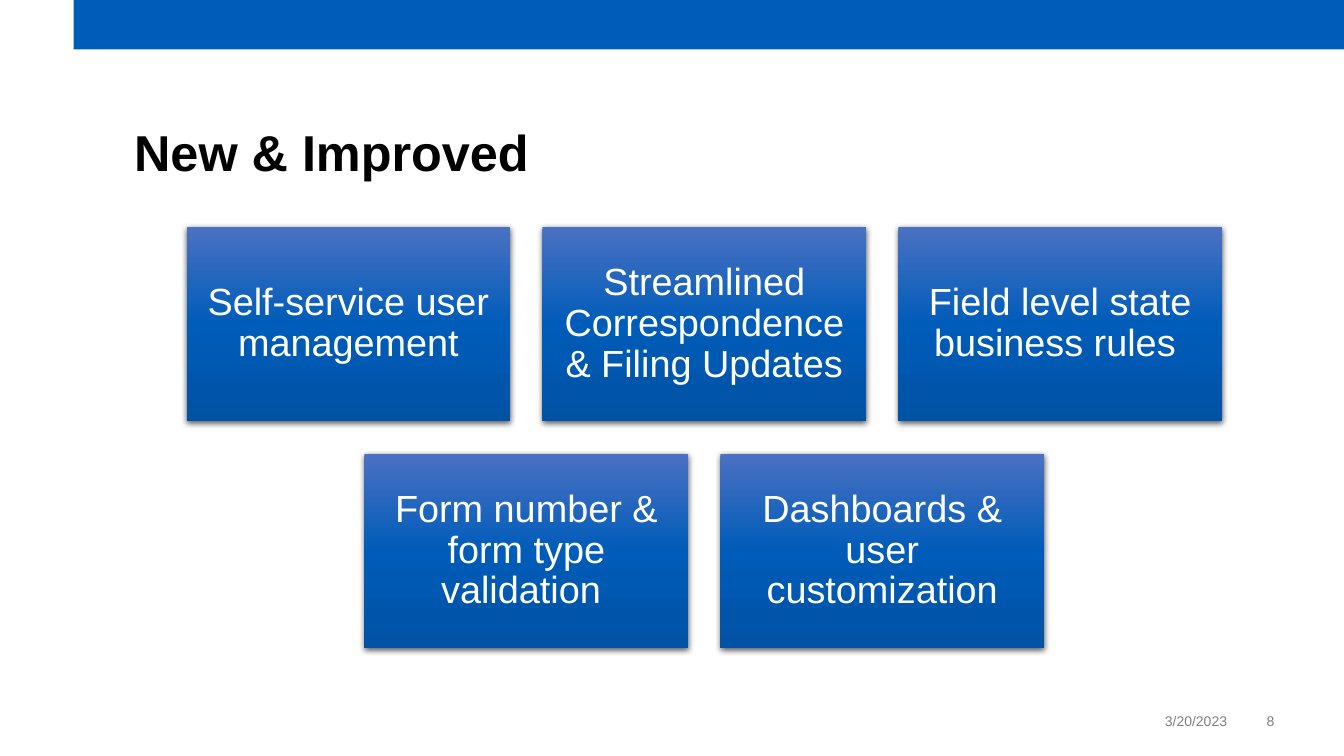
from lxml import etree
from pptx import Presentation
from pptx.dml.color import RGBColor
from pptx.enum.shapes import MSO_SHAPE
from pptx.enum.text import MSO_ANCHOR, MSO_AUTO_SIZE, PP_ALIGN
from pptx.oxml.ns import qn
from pptx.util import Inches, Pt

RECT = MSO_SHAPE.RECTANGLE
LEFT, CENTER, RIGHT = PP_ALIGN.LEFT, PP_ALIGN.CENTER, PP_ALIGN.RIGHT
MIDDLE, BOTTOM = MSO_ANCHOR.MIDDLE, MSO_ANCHOR.BOTTOM
NO_FIT = MSO_AUTO_SIZE.NONE

FONT = "Arial"
BLUE = "005CB9"
CARD_STOPS = [(0, "4B71C2"), (50, BLUE), (100, "0052A4")]
CARD_W, CARD_H = 3.21, 1.93
CARD_GAP = 0.32
CARD_ROWS = [
    ["Self-service user management",
     "Streamlined Correspondence & Filing Updates",
     "Field level state business rules "],
    ["Form number & form type validation ",
     "Dashboards & user customization"],
]


def color(hex_string):
    return RGBColor.from_string(hex_string)


def write(sp, text, size, hex_string, align, anchor, inset=0, bold=False, spacing=None):
    tf = sp.text_frame
    tf.word_wrap = True
    tf.auto_size = NO_FIT
    tf.vertical_anchor = anchor
    tf.margin_left = tf.margin_right = Inches(inset)
    tf.margin_top = tf.margin_bottom = Inches(inset)
    p = tf.paragraphs[0]
    p.alignment = align
    p.line_spacing = spacing
    r = p.add_run()
    r.text = text
    r.font.name = FONT
    r.font.size = Pt(size)
    r.font.bold = bold
    r.font.color.rgb = color(hex_string)


def add_color(parent, hex_string):
    return etree.SubElement(parent, qn("a:srgbClr"), val=hex_string)


def fill_gradient(sp, stops):
    """Fill from top to bottom with (percent, colour) stops."""
    sp.fill.gradient()
    sp.fill.gradient_angle = 270
    stop_list = sp._element.spPr.find(".//" + qn("a:gsLst"))
    for old in list(stop_list):
        stop_list.remove(old)
    for percent, hex_string in stops:
        stop = etree.SubElement(stop_list, qn("a:gs"), pos=str(percent * 1000))
        add_color(stop, hex_string)


def drop_shadow(sp):
    sp.shadow.inherit = False
    effects = sp._element.spPr.find(qn("a:effectLst"))
    shadow = etree.SubElement(
        effects, qn("a:outerShdw"), blurRad=str(Pt(4.5)), dist=str(Pt(1.5)),
        dir="5400000", algn="ctr", rotWithShape="0")
    etree.SubElement(add_color(shadow, "000000"), qn("a:alpha"), val="63000")


def add_banner(s, x, y, w, h):
    sp = s.shapes.add_shape(RECT, Inches(x), Inches(y), Inches(w), Inches(h))
    sp.shadow.inherit = False
    sp.fill.solid()
    sp.fill.fore_color.rgb = color(BLUE)
    sp.line.fill.background()


def add_title(s, text, x, y, w, h):
    sp = s.shapes.title
    sp.left, sp.top, sp.width, sp.height = map(Inches, (x, y, w, h))
    write(sp, text, 36, "000000", LEFT, BOTTOM, bold=True, spacing=0.9)


def add_card(s, text, x, y):
    sp = s.shapes.add_shape(RECT, Inches(x), Inches(y), Inches(CARD_W), Inches(CARD_H))
    fill_gradient(sp, CARD_STOPS)
    sp.line.fill.background()
    drop_shadow(sp)
    write(sp, text, 27, "FFFFFF", CENTER, MIDDLE, inset=0.11, spacing=0.9)


def add_cards(s, rows, x, y, w):
    """Stack rows of cards, each row centred in the width."""
    for i, row in enumerate(rows):
        row_w = len(row) * (CARD_W + CARD_GAP) - CARD_GAP
        row_x = x + (w - row_w) / 2
        for j, text in enumerate(row):
            add_card(s, text, row_x + j * (CARD_W + CARD_GAP), y + i * (CARD_H + CARD_GAP))


def add_footer(s, date, number, x, y, h):
    for text, left, w in ((date, x, 0.7), (number, x + 0.8, 0.37)):
        sp = s.shapes.add_textbox(Inches(left), Inches(y), Inches(w), Inches(h))
        write(sp, text, 10, "808080", RIGHT, BOTTOM)


def main():
    prs = Presentation()
    prs.slide_width, prs.slide_height = Inches(13.33), Inches(7.5)
    s = prs.slides.add_slide(prs.slide_layouts[5])
    add_banner(s, 0.73, 0, 12.6, 0.49)
    add_title(s, "New & Improved", 1.33, 1.22, 11.3, 0.59)
    add_cards(s, CARD_ROWS, 1.85, 2.25, 10.27)
    add_footer(s, "3/20/2023", "8", 11.47, 7.04, 0.2)
    prs.save("out.pptx")


if __name__ == "__main__":
    main()
